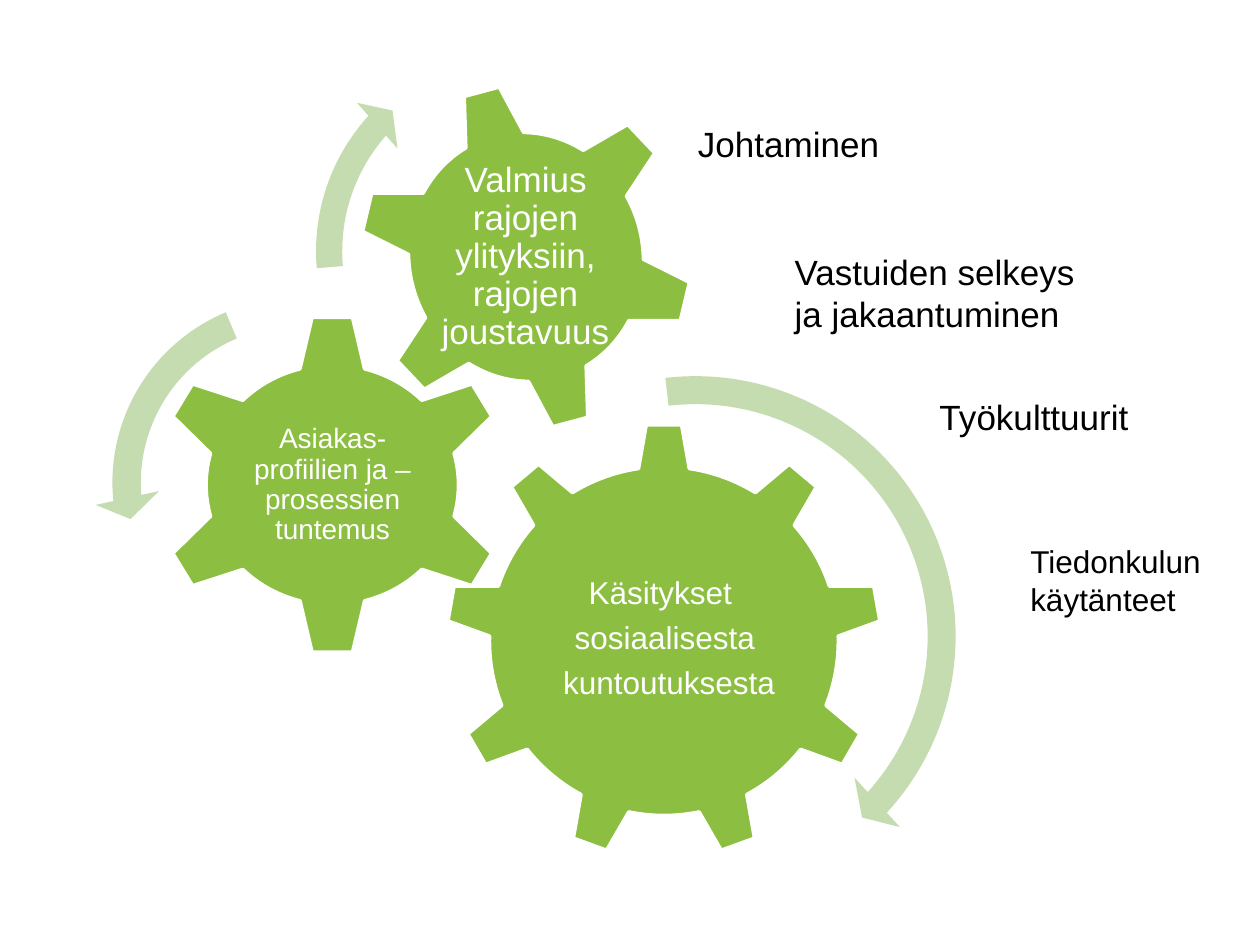
from pptx import Presentation
from pptx.dml.color import RGBColor
from pptx.enum.shapes import MSO_SHAPE
from pptx.enum.text import MSO_ANCHOR, MSO_AUTO_SIZE, PP_ALIGN
from pptx.util import Cm, Pt

GEAR_6, GEAR_9 = MSO_SHAPE.GEAR_6, MSO_SHAPE.GEAR_9
RIGHT, LEFT = MSO_SHAPE.CIRCULAR_ARROW, MSO_SHAPE.LEFT_CIRCULAR_ARROW
MIDDLE, CENTER = MSO_ANCHOR.MIDDLE, PP_ALIGN.CENTER
GROW = MSO_AUTO_SIZE.SHAPE_TO_FIT_TEXT

FONT = "Arial"
COLORS = {"gear": "8CBE41", "arrow": "C5DBB0", "edge": "FFFFFF",
          "light": "FFFFFF", "dark": "000000"}

# Gears: shape, place in cm, turn, text place, inset, size, paragraphs
GEARS = [
    (GEAR_9, (8.99, 8.53, 8.79, 8.79), 0, (10.77, 10.62, 5.26, 4.52), 0.08, 18,
     ["Käsitykset ", "sosiaalisesta", " kuntoutuksesta"]),
    (GEAR_6, (3.12, 6.32, 7.16, 6.91), 0, (4.9, 8.08, 3.61, 3.4), 0.05, 16,
     ["Asiakas-profiilien ja –prosessien tuntemus"]),
    (GEAR_6, (7.24, 1.65, 6.73, 7.06), 345, (8.69, 3.23, 3.81, 3.91), 0.08, 20,
     ["Valmius rajojen ylityksiin, rajojen joustavuus"]),
]

# Arrows: shape, left, top, side, band, head angle, end, start, head width
ARROWS = [
    (RIGHT, 8.38, 7.19, 11.28, (0.05, 2.99, 25.44, 158.02, 0.06)),
    (LEFT, 1.9, 5.64, 8.18, (0.07, 4.3, 104.89, 148.38, 0.08)),
    (RIGHT, 6.02, 0.66, 8.81, (0.06, 3.94, 133.14, 105.08, 0.07)),
]

# Labels: place, size, text
LABELS = [
    ((13.82, 2.34, 4.88, 1.12), 20, "Johtaminen"),
    ((15.77, 4.93, 6.71, 1.96), 20, "Vastuiden selkeys ja jakaantuminen"),
    ((18.69, 7.85, 4.34, 1.12), 20, "Työkulttuurit"),
    ((20.52, 10.8, 4.29, 1.8), 18, "Tiedonkulun käytänteet"),
]


def color(name):
    return RGBColor.from_string(COLORS[name])


def add_form(shapes, kind, place, fill):
    form = shapes.add_shape(kind, *map(Cm, place))
    form.shadow.inherit = False
    form.fill.solid()
    form.fill.fore_color.rgb = color(fill)
    return form


def add_text(shapes, place, lines, size, ink):
    frame = shapes.add_textbox(*map(Cm, place)).text_frame
    frame.word_wrap = True
    frame.text = "\n".join(lines)
    for para in frame.paragraphs:
        for run in para.runs:
            run.font.name = FONT
            run.font.size = Pt(size)
            run.font.color.rgb = color(ink)
    return frame


deck = Presentation()
deck.slide_width, deck.slide_height = Cm(25.4), Cm(19.05)
slide = deck.slides.add_slide(deck.slide_layouts[6])
group = slide.shapes.add_group_shape().shapes

# Gears with their captions
for kind, place, turn, inner, inset, size, lines in GEARS:
    gear = add_form(group, kind, place, "gear")
    gear.rotation = turn
    gear.line.color.rgb = color("edge")
    gear.line.width = Pt(2)
    frame = add_text(group, inner, lines, size, "light")
    frame.vertical_anchor = MIDDLE
    frame.margin_left = frame.margin_right = Cm(inset)
    frame.margin_top = frame.margin_bottom = Cm(inset)
    for para in frame.paragraphs:
        para.alignment = CENTER
        para.line_spacing = 0.9
        para.space_after = Pt(0.35 * size)

# Arrows that show the turning
for kind, left, top, side, bends in ARROWS:
    arrow = add_form(group, kind, (left, top, side, side), "arrow")
    arrow.line.fill.background()
    for spot, bend in enumerate(bends):
        arrow.adjustments[spot] = bend

# Labels on the right
for place, size, text in LABELS:
    add_text(slide.shapes, place, [text], size, "dark").auto_size = GROW

deck.save("out.pptx")
